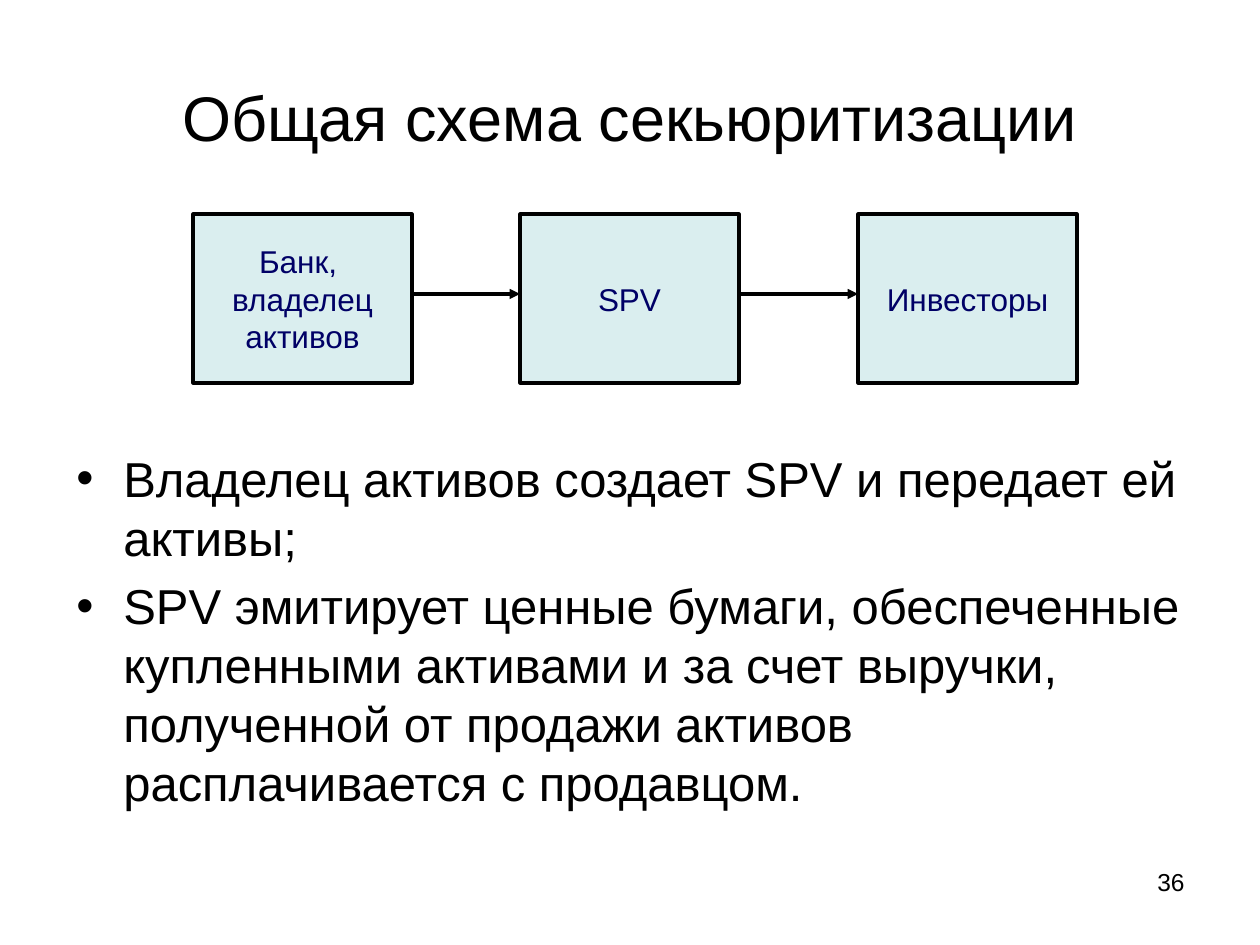
from pptx import Presentation
from pptx import util as u
from pptx.dml.color import RGBColor
from pptx.enum import shapes, text
from pptx.oxml.ns import qn
from lxml import etree

TITLE = "Общая схема секьюритизации"
STAGES = [(193, "Банк, \nвладелец\nактивов"), (520, "SPV"), (858, "Инвесторы")]
POINTS = [
    "Владелец активов создает SPV и передает ей активы;",
    "SPV эмитирует ценные бумаги, обеспеченные купленными активами и за счет выручки, "
    "полученной от продажи активов расплачивается с продавцом.",
]
PAGE_NUMBER = "36"

COLORS = {"text": "000000", "line": "000000", "stage": "BBE0E3", "stage_text": "000066"}
FONT = "Arial"
LINE_WIDTH = u.Pt(1.75)
STAGE_TOP, STAGE_WIDTH, STAGE_HEIGHT = 214, 219, 169
ARROW_Y = 294
BULLET_INDENT = 47


def px(value):
    return u.Emu(value * u.Inches(1) // 126)


def color(name):
    return RGBColor.from_string(COLORS[name])


def write(shape, content, size, color_name, align, anchor=text.MSO_ANCHOR.TOP, wrap=True):
    frame = shape.text_frame
    frame.text = content
    frame.word_wrap = wrap
    frame.vertical_anchor = anchor
    for paragraph in frame.paragraphs:
        paragraph.alignment = align
        for run in paragraph.runs:
            run.font.name = FONT
            run.font.size = u.Pt(size)
            run.font.color.rgb = color(color_name)
    return frame


def add_text(slide, box, *style, **options):
    return write(slide.shapes.add_textbox(*map(px, box)), *style, **options)


def add_bullet(paragraph):
    paragraph.space_before = u.Pt(5.6)
    properties = paragraph._p.get_or_add_pPr()
    properties.set("marL", str(px(BULLET_INDENT)))
    properties.set("indent", str(-px(BULLET_INDENT)))
    etree.SubElement(properties, qn("a:buFont"), typeface=FONT)
    etree.SubElement(properties, qn("a:buChar"), char="•")


def add_stage(slide, left, label):
    shape = slide.shapes.add_shape(
        shapes.MSO_SHAPE.FLOWCHART_PROCESS,
        *map(px, (left, STAGE_TOP, STAGE_WIDTH, STAGE_HEIGHT)))
    shape.shadow.inherit = False
    shape.fill.solid()
    shape.fill.fore_color.rgb = color("stage")
    fill = shape._element.spPr.find(qn("a:solidFill"))
    etree.SubElement(fill[0], qn("a:alpha"), val="54000")
    shape.line.color.rgb = color("line")
    shape.line.width = LINE_WIDTH
    write(shape, label, 18, "stage_text", text.PP_ALIGN.CENTER,
          anchor=text.MSO_ANCHOR.MIDDLE, wrap=False)


def add_arrow(slide, start, end):
    arrow = slide.shapes.add_connector(
        shapes.MSO_CONNECTOR.STRAIGHT, *map(px, (start, ARROW_Y, end, ARROW_Y)))
    arrow.line.color.rgb = color("line")
    arrow.line.width = LINE_WIDTH
    etree.SubElement(arrow.line._get_or_add_ln(), qn("a:tailEnd"), type="triangle")
    etree.SubElement(arrow._element.spPr, qn("a:effectLst"))


def main():
    presentation = Presentation()
    presentation.slide_width, presentation.slide_height = px(1260), px(945)
    slide = presentation.slides.add_slide(presentation.slide_layouts[6])

    add_text(slide, (63, 38, 1134, 157), TITLE, 36, "text", text.PP_ALIGN.CENTER,
             anchor=text.MSO_ANCHOR.MIDDLE)
    body = add_text(slide, (64, 442, 1134, 397), "\n".join(POINTS), 28, "text",
                    text.PP_ALIGN.LEFT)
    for paragraph in body.paragraphs:
        add_bullet(paragraph)

    for left, label in STAGES:
        add_stage(slide, left, label)
    for (left, _), (next_left, _) in zip(STAGES, STAGES[1:]):
        add_arrow(slide, left + STAGE_WIDTH, next_left)

    add_text(slide, (903, 861, 294, 66), PAGE_NUMBER, 14, "text", text.PP_ALIGN.RIGHT)
    presentation.save("out.pptx")


if __name__ == "__main__":
    main()
